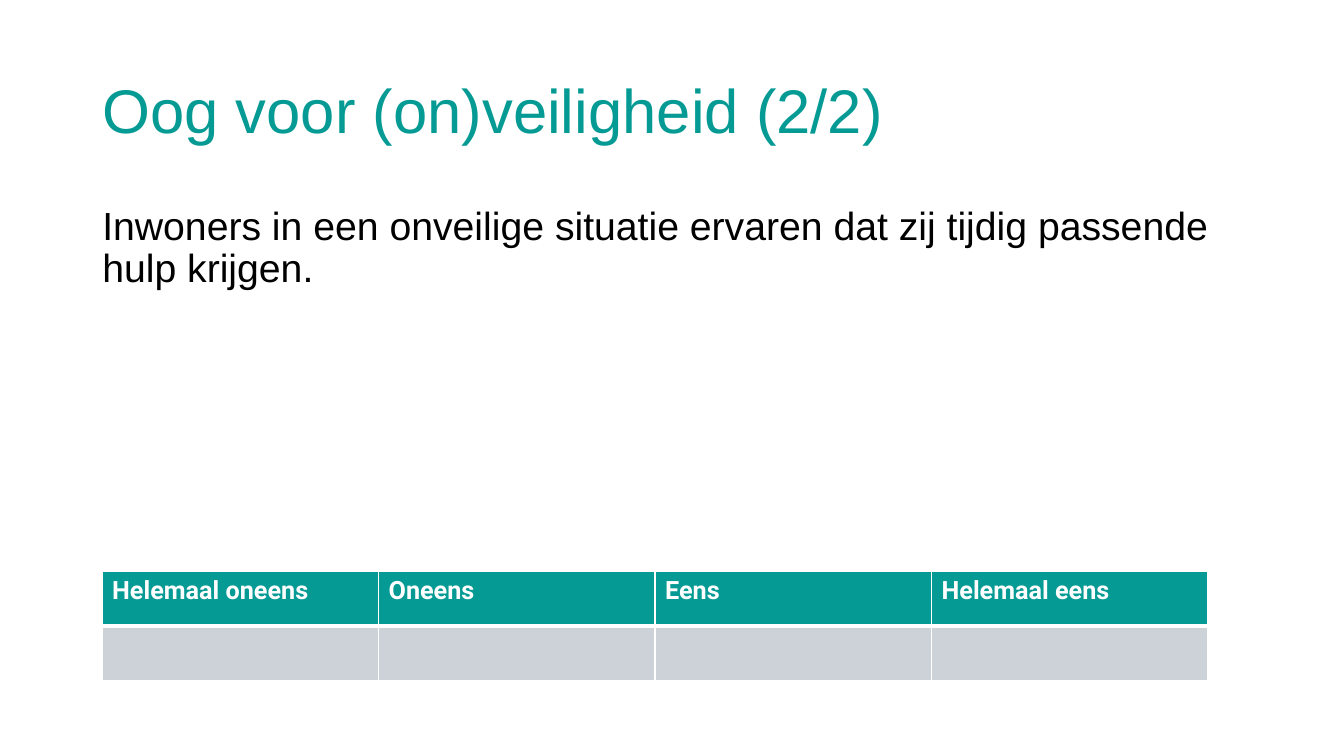
import pptx
import pptx.util
import pptx.dml.color
import pptx.enum.text
import pptx.oxml
import pptx.oxml.ns
from dataclasses import dataclass

Pt = pptx.util.Pt

# Content
HEADING = "Oog voor (on)veiligheid (2/2)"
STATEMENT = "Inwoners in een onveilige situatie ervaren dat zij tijdig passende hulp krijgen."
ANSWERS = ["Helemaal oneens", "Oneens", "Eens", "Helemaal eens"]


@dataclass(frozen=True)
class Theme:
    teal: str = "059B94"
    grey: str = "CCD2D8"
    black: str = "000000"
    white: str = "FFFFFF"
    text_font: str = "Arial"
    scale_font: str = "Roboto"
    heading_size: int = 44
    statement_size: int = 28
    answer_size: int = 18
    thin_line: int = 1
    thick_line: int = 3


THEME = Theme()

# Layout in points: left, top, width, height
SLIDE_SIZE = (960, 540)
HEADING_BOX = (66, 28.75, 828, 104.4)
STATEMENT_BOX = (66, 143.75, 814.5, 342.6)
SCALE_BOX = (72.9, 408.3, 790, 78)


def rgb(colour):
    return pptx.dml.color.RGBColor.from_string(colour)


def style(paragraph, name, size, colour, bold=False):
    paragraph.font.name = name
    paragraph.font.size = Pt(size)
    paragraph.font.color.rgb = rgb(colour)
    paragraph.font.bold = bold


def add_border(cell, side, width):
    line = pptx.oxml.parse_xml(
        f'<a:ln{side} {pptx.oxml.ns.nsdecls("a")} w="{Pt(width)}">'
        f'<a:solidFill><a:srgbClr val="{THEME.white}"/></a:solidFill></a:ln{side}>')
    cell._tc.get_or_add_tcPr().append(line)


def add_heading(slide):
    heading = slide.shapes.title
    heading.left, heading.top, heading.width, heading.height = map(Pt, HEADING_BOX)
    frame = heading.text_frame
    frame.text = HEADING
    frame.vertical_anchor = pptx.enum.text.MSO_ANCHOR.MIDDLE
    paragraph = frame.paragraphs[0]
    paragraph.alignment = pptx.enum.text.PP_ALIGN.LEFT
    paragraph.line_spacing = 0.9
    style(paragraph, THEME.text_font, THEME.heading_size, THEME.teal)


def add_statement(slide):
    frame = slide.shapes.add_textbox(*map(Pt, STATEMENT_BOX)).text_frame
    frame.word_wrap = True
    frame.text = STATEMENT
    paragraph = frame.paragraphs[0]
    paragraph.line_spacing = 0.9
    style(paragraph, THEME.text_font, THEME.statement_size, THEME.black)


def add_answer_scale(slide):
    rows = [ANSWERS, [""] * len(ANSWERS)]
    scale = slide.shapes.add_table(len(rows), len(ANSWERS), *map(Pt, SCALE_BOX)).table
    scale.horz_banding = False
    for column in scale.columns:
        column.width = Pt(SCALE_BOX[2] / len(ANSWERS))
    for row_index, answers in enumerate(rows):
        is_header = row_index == 0
        # The thick line separates the header from the answer row
        thick_side = "B" if is_header else "T"
        for column_index, answer in enumerate(answers):
            cell = scale.cell(row_index, column_index)
            for side in "LRTB":
                add_border(cell, side, THEME.thick_line if side == thick_side else THEME.thin_line)
            cell.fill.solid()
            cell.fill.fore_color.rgb = rgb(THEME.teal if is_header else THEME.grey)
            if is_header:
                cell.text = answer
                style(cell.text_frame.paragraphs[0], THEME.scale_font,
                      THEME.answer_size, THEME.white, bold=True)


def main():
    deck = pptx.Presentation()
    deck.slide_width, deck.slide_height = map(Pt, SLIDE_SIZE)
    slide = deck.slides.add_slide(deck.slide_layouts[5])
    add_heading(slide)
    add_statement(slide)
    add_answer_scale(slide)
    deck.save("out.pptx")


if __name__ == "__main__":
    main()
